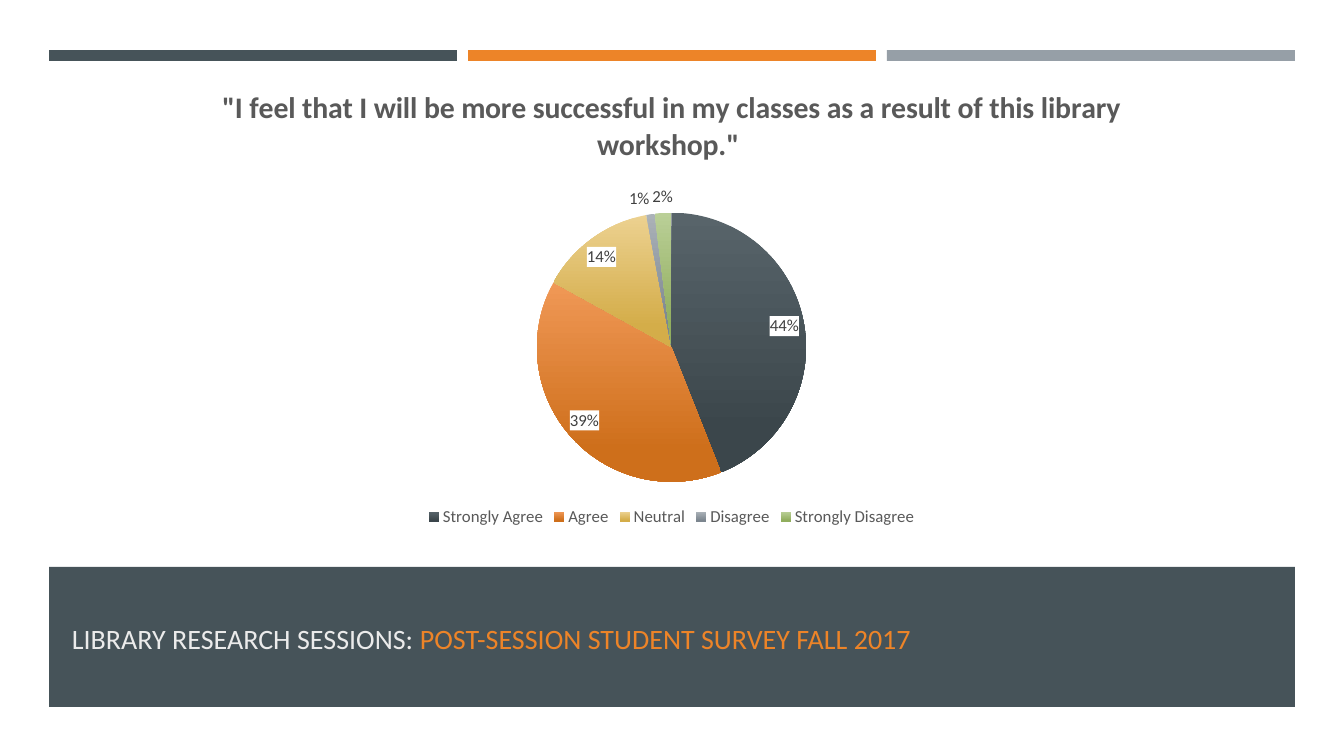
from lxml.etree import SubElement
from pptx import Presentation
from pptx.chart.data import CategoryChartData
from pptx.dml.color import RGBColor
from pptx.enum.chart import XL_CHART_TYPE, XL_LABEL_POSITION, XL_LEGEND_POSITION
from pptx.enum.shapes import MSO_SHAPE
from pptx.enum.text import MSO_ANCHOR
from pptx.oxml.ns import qn
from pptx.util import Pt

EMU_PER_PX = 914400 / 100.8
SLATE, ORANGE, GREY = "465359", "ED8428", "969FA7"
QUESTION = '"I feel that I will be more successful in my classes as a result of this library workshop." '
ANSWERS = [
    ("Strongly Agree", 0.44, "58646A", "3B464B"),
    ("Agree", 0.39, "F09856", "CE6F1B"),
    ("Neutral", 0.14, "ECD190", "D4AD49"),
    ("Disagree", 0.01, "ABB2B8", "7C868F"),
    ("Strongly Disagree", 0.02, "BACF97", "91AE5E"),
]


def px(*lengths):
    return [round(length * EMU_PER_PX) for length in lengths]


def color(value):
    return RGBColor.from_string(value)


def set_font(font, value, **formats):
    for name, setting in {"name": "Calibri", "bold": False, **formats}.items():
        setattr(font, name, setting)
    font.color.rgb = color(value)


def add_band(slide, box, fill):
    shape = slide.shapes.add_shape(MSO_SHAPE.RECTANGLE, *px(*box))
    shape.shadow.inherit = False
    shape.fill.solid()
    shape.fill.fore_color.rgb = color(fill)
    shape.line.fill.background()


def add_title(slide, box, parts):
    frame = slide.shapes.add_textbox(*px(*box)).text_frame
    for name, setting in {"word_wrap": True, "vertical_anchor": MSO_ANCHOR.MIDDLE}.items():
        setattr(frame, name, setting)
    for text, value in parts:
        run = frame.paragraphs[0].add_run()
        run.text = text
        set_font(run.font, value, size=Pt(20))


def fill_slice(point, top, bottom):
    fill = point.format.fill
    fill.gradient()
    fill.gradient_angle = 270
    for stop, position, value in zip(fill.gradient_stops, (0, 0.84), (top, bottom)):
        stop.position = position
        stop.color.rgb = color(value)
    point.format.line.fill.background()


def style_labels(series):
    labels = series.data_labels
    formats = {
        "show_value": True,
        "show_percentage": False,
        "number_format": "0%",
        "number_format_is_linked": False,
        "position": XL_LABEL_POSITION.BEST_FIT,
    }
    for name, setting in formats.items():
        setattr(labels, name, setting)
    set_font(labels.font, "404040", size=Pt(12))
    element = series._element.find(qn("c:dLbls"))
    properties = SubElement(element, qn("c:spPr"))
    solid = SubElement(properties, qn("a:solidFill"))
    SubElement(solid, qn("a:srgbClr"), val="FFFFFF")
    element.find(qn("c:txPr")).addprevious(properties)


def add_pie(slide, box):
    data = CategoryChartData(number_format="0%")
    data.categories = [answer[0] for answer in ANSWERS]
    data.add_series(QUESTION, [answer[1] for answer in ANSWERS])
    chart = slide.shapes.add_chart(XL_CHART_TYPE.PIE, *px(*box), data).chart
    set_font(chart.font, "000000", size=Pt(10))

    chart.has_title = True
    paragraph = chart.chart_title.text_frame.paragraphs[0]
    run = paragraph.add_run()
    run.text = QUESTION
    set_font(run.font, "595959", size=Pt(21.3), bold=True)

    chart.has_legend = True
    formats = {"position": XL_LEGEND_POSITION.BOTTOM, "include_in_layout": False}
    for name, setting in formats.items():
        setattr(chart.legend, name, setting)
    set_font(chart.legend.font, "595959", size=Pt(12))

    plot = chart.plots[0]
    plot.vary_by_categories = True
    series = plot.series[0]
    for index, (_, _, top, bottom) in enumerate(ANSWERS):
        fill_slice(series.points[index], top, bottom)
    style_labels(series)


def main():
    presentation = Presentation()
    presentation.slide_width, presentation.slide_height = px(1344, 756)
    slide = presentation.slides.add_slide(presentation.slide_layouts[6])
    for index, fill in enumerate((SLATE, ORANGE, GREY)):
        add_band(slide, (49 + index * 419, 50, 408, 11), fill)
    add_band(slide, (49, 567, 1246, 140), SLATE)
    add_title(slide, (62, 600, 1019, 76), [
        ("LIBRARY RESEARCH SESSIONS: ", "EBEBEB"),
        ("POST-SESSION STUDENT SURVEY FALL 2017", ORANGE),
    ])
    add_pie(slide, (49, 67, 1245, 464))
    presentation.save("out.pptx")


if __name__ == "__main__":
    main()
